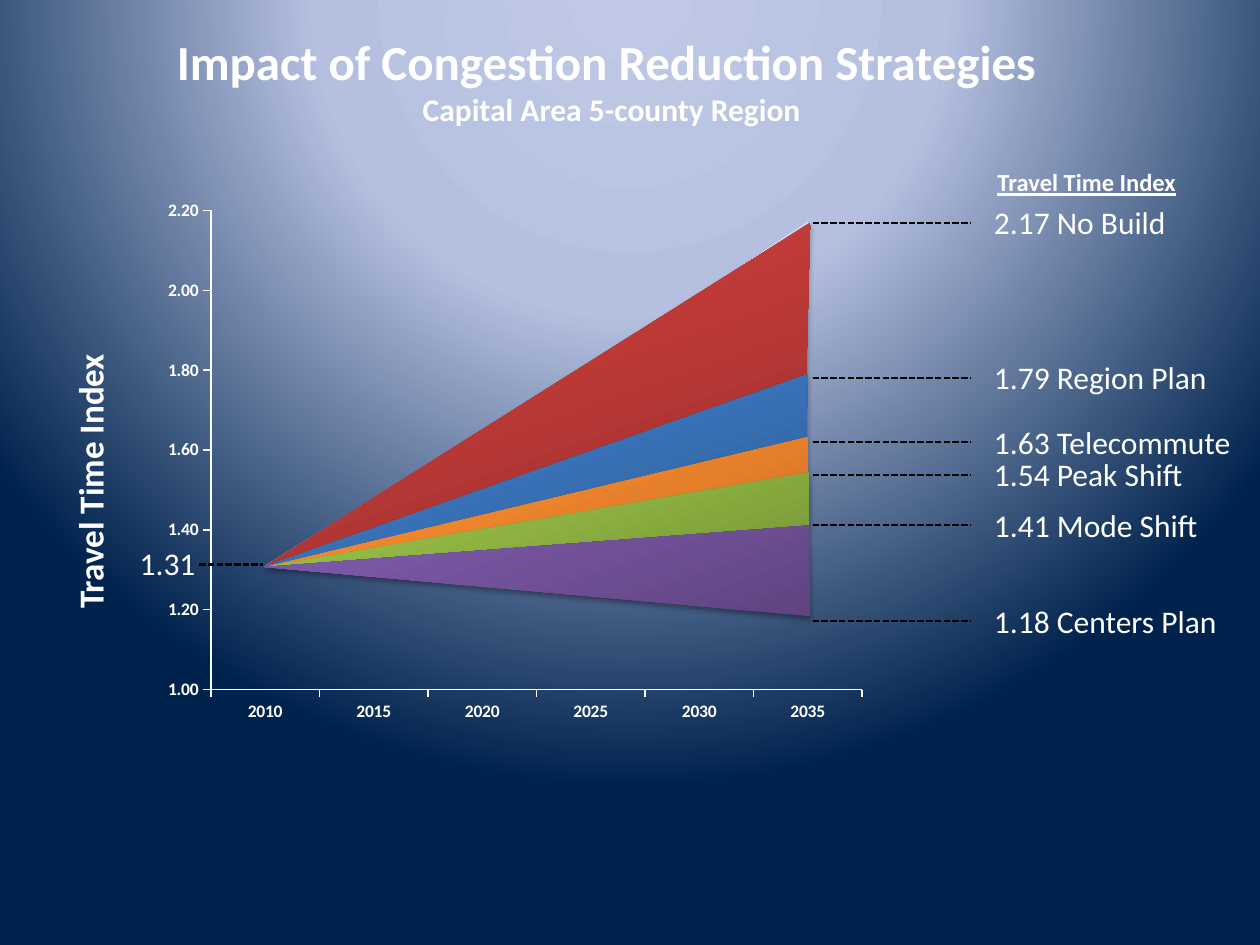
from dataclasses import dataclass

import lxml.etree
import pptx
import pptx.chart.data
import pptx.dml.color
import pptx.enum.chart
import pptx.enum.dml
import pptx.enum.shapes
import pptx.enum.text
import pptx.oxml
import pptx.oxml.ns
import pptx.util

SCALE = 9144
FONT = "Calibri"
WHITE = "FFFFFF"
BLACK = "000000"
SPACE = 'xmlns:a="http://schemas.openxmlformats.org/drawingml/2006/main"'
Box = tuple[int, int, int, int]
Point = tuple[int, int]


@dataclass
class Band:
    label: str
    top: int
    level: int
    width: int
    wedge: tuple[Point, ...] = ()
    shades: tuple[str, ...] = ()


@dataclass
class Trend:
    color: str
    values: tuple[float, ...]


BANDS = [
    Band("2.17 No Build", 156, 177, 195),
    Band("1.79 Region Plan", 279, 300, 211, ((640, 297), (643, 177), (211, 449)),
         ("9C2F2D", "CB3E3A", "CE3B37")),
    Band("1.63 Telecommute", 331, 351, 221, ((640, 348), (641, 297), (209, 450)),
         ("2F5F99", "3D7CC7", "3A7CCB")),
    Band("1.54 Peak Shift", 356, 377, 221, ((641, 376), (641, 347), (211, 450)),
         ("CC6E20", "FF9034", "FF9136")),
    Band("1.41 Mode Shift", 397, 417, 221, ((642, 417), (642, 375), (210, 450)),
         ("779737", "9BC348", "9DC746")),
    Band("1.18 Centers Plan", 473, 493, 221, ((643, 489), (642, 417), (210, 450)),
         ("5F4480", "7B58A6", "7C57A8")),
]
TRENDS = [
    Trend(WHITE, (1.31, 1.48, 1.65, 1.82, 1.99, 2.17)),
    Trend("F5F4ED", (1.31, 1.41, 1.5, 1.6, 1.69, 1.79)),
    Trend(BLACK, (1.31, 1.37, 1.44, 1.5, 1.57, 1.63)),
    Trend(WHITE, (1.31, 1.36, 1.4, 1.45, 1.5, 1.54)),
    Trend("77933C", (1.31, 1.33, 1.35, 1.37, 1.39, 1.41)),
    Trend("7030A0", (1.31, 1.28, 1.26, 1.23, 1.21, 1.18)),
]


def px(count: int) -> pptx.util.Emu:
    return pptx.util.Emu(count * SCALE)


def rgb(code: str) -> pptx.dml.color.RGBColor:
    return pptx.dml.color.RGBColor.from_string(code)


def blend(owner, fill, stops, course: str) -> None:
    fill.solid()
    plain = owner.element.xpath(".//a:solidFill")[0]
    marks = "".join(f'<a:gs pos="{pos * 1000}"><a:srgbClr val="{code}"/></a:gs>'
                    for pos, code in stops)
    smooth = pptx.oxml.parse_xml(f'<a:gradFill {SPACE} rotWithShape="1">'
                                 f'<a:gsLst>{marks}</a:gsLst>{course}</a:gradFill>')
    plain.getparent().replace(plain, smooth)


def write(slide, box: Box, *lines: tuple[str, int], bold: bool = False,
          under: bool = False, center: bool = False, turn: int = 0) -> None:
    shape = slide.shapes.add_textbox(*map(px, box))
    shape.rotation = turn
    frame = shape.text_frame
    frame.word_wrap = True
    for index, (words, size) in enumerate(lines):
        para = frame.add_paragraph() if index else frame.paragraphs[0]
        if center:
            para.alignment = pptx.enum.text.PP_ALIGN.CENTER
        run = para.add_run()
        run.text = words
        font = run.font
        font.name, font.size = FONT, pptx.util.Pt(size)
        font.bold, font.underline = bold, under
        font.color.rgb = rgb(WHITE)


def dash(slide, left: int, right: int, level: int) -> None:
    line = slide.shapes.add_connector(pptx.enum.shapes.MSO_CONNECTOR.STRAIGHT,
                                      px(left), px(level), px(right), px(level))
    line.line.color.rgb = rgb(BLACK)
    line.line.width = pptx.util.Pt(1.25)
    line.line.dash_style = pptx.enum.dml.MSO_LINE.SQUARE_DOT
    lxml.etree.SubElement(line.element.spPr, pptx.oxml.ns.qn("a:effectLst"))


def wedge(slide, band: Band) -> None:
    first, *rest = band.wedge
    maker = slide.shapes.build_freeform(*first, scale=SCALE)
    maker.add_line_segments(rest, close=True)
    shape = maker.convert_to_shape()
    shape.line.fill.background()
    shape.shadow.inherit = False
    blend(shape, shape.fill, zip((0, 80, 100), band.shades),
          '<a:lin ang="15042000" scaled="0"/>')
    shape.element.spPr.find(pptx.oxml.ns.qn("a:effectLst")).append(pptx.oxml.parse_xml(
        f'<a:outerShdw {SPACE} blurRad="39370" dist="22860" dir="5400000" rotWithShape="0">'
        f'<a:srgbClr val="{BLACK}"><a:alpha val="35000"/></a:srgbClr></a:outerShdw>'))


def plot(slide, box: Box) -> None:
    data = pptx.chart.data.CategoryChartData()
    data.categories = [str(year) for year in range(2010, 2036, 5)]
    for index, trend in enumerate(TRENDS, 1):
        data.add_series(f"Series {index}", trend.values)
    kinds = pptx.enum.chart
    chart = slide.shapes.add_chart(kinds.XL_CHART_TYPE.LINE, *map(px, box), data).chart
    chart.has_legend = chart.has_title = False
    chart.font.name, chart.font.size = FONT, pptx.util.Pt(10)
    chart.font.color.rgb = rgb(WHITE)
    chart.plots[0].vary_by_categories = False
    for trend, series in zip(TRENDS, chart.plots[0].series):
        series.smooth = False
        series.marker.style = kinds.XL_MARKER_STYLE.NONE
        series.format.line.width = pptx.util.Pt(0.25)
        series.format.line.color.rgb = rgb(trend.color)
    for axis in (chart.category_axis, chart.value_axis):
        axis.has_major_gridlines = False
        axis.major_tick_mark = kinds.XL_TICK_MARK.OUTSIDE
        axis.format.line.color.rgb = rgb(WHITE)
        font = axis.tick_labels.font
        font.name, font.size, font.bold = FONT, pptx.util.Pt(10), True
        font.color.rgb = rgb(WHITE)
    scale = chart.value_axis
    scale.minimum_scale, scale.maximum_scale, scale.major_unit = 1, 2.2, 0.2
    scale.tick_labels.number_format = "#,##0.00"
    scale.tick_labels.number_format_is_linked = False
    area = chart.element.chart.plotArea
    for old in area.findall(pptx.oxml.ns.qn("c:layout")):
        area.remove(old)
    parts = "".join(f'<c:{name} val="{value}"/>' for name, value in (
        ("layoutTarget", "inner"), ("xMode", "edge"), ("yMode", "edge"),
        ("x", 0.116), ("y", 0.107), ("w", 0.603), ("h", 0.742)))
    area.insert(0, pptx.oxml.parse_xml(
        '<c:layout xmlns:c="http://schemas.openxmlformats.org/drawingml/2006/chart">'
        f'<c:manualLayout>{parts}</c:manualLayout></c:layout>'))


def main() -> None:
    deck = pptx.Presentation()
    deck.slide_width, deck.slide_height = px(1000), px(750)
    slide = deck.slides.add_slide(deck.slide_layouts[6])
    blend(slide, slide.background.fill, ((0, "BFC9E5"), (40, "B5C0E0"), (100, "00234D")),
          '<a:path path="circle"><a:fillToRect l="50000" t="-80000" r="50000" b="180000"/>'
          '</a:path>')
    plot(slide, (68, 112, 857, 513))
    write(slide, (770, 128, 185, 34), ("Travel Time Index", 14),
          bold=True, under=True, center=True)
    write(slide, (-185, 360, 513, 44), ("Travel Time Index", 20),
          bold=True, center=True, turn=270)
    write(slide, (101, 427, 75, 40), ("1.31", 18))
    dash(slide, 158, 209, 448)
    for band in BANDS:
        if band.wedge:
            wedge(slide, band)
        write(slide, (779, band.top, band.width, 40), (band.label, 18))
        dash(slide, 645, 770, band.level)
    write(slide, (125, 20, 721, 64), ("Impact of Congestion Reduction Strategies ", 28),
          ("Capital Area 5-county Region", 18), bold=True, center=True)
    deck.save("out.pptx")


if __name__ == "__main__":
    main()
